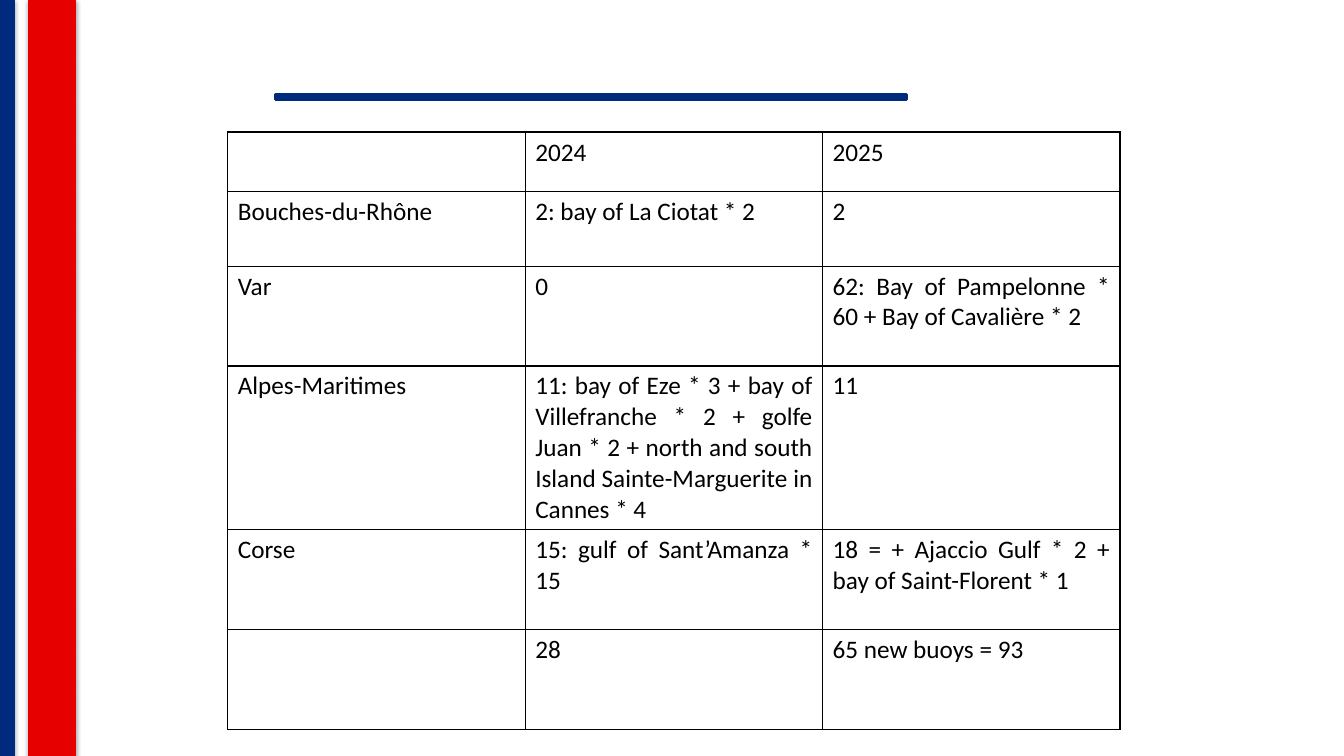
"""Build the slide with the table of mooring buoys per department."""
from lxml.etree import SubElement
from pptx import Presentation
from pptx.dml.color import RGBColor
from pptx.enum.shapes import MSO_SHAPE
from pptx.enum.text import PP_ALIGN
from pptx.oxml import parse_xml
from pptx.oxml.ns import nsdecls, qn
from pptx.util import Inches, Pt

COLORS = {"blue": "002A7E", "red": "E60000", "black": "000000", "white": "FFFFFF"}

deck = Presentation()
deck.slide_width, deck.slide_height = Inches(13.33), Inches(7.5)
page = deck.slides.add_slide(deck.slide_layouts[6])


def across(percent):
    return int(deck.slide_width * percent / 100)


def down(percent):
    return int(deck.slide_height * percent / 100)


bars = [
    (0, 0, 0.98, 100, "blue", True),
    (2.18, 0, 3.38, 100, "red", True),
    (20.48, 12.53, 46.96, 0.67, "blue", False),
]
for left, top, width, height, color, shaded in bars:
    bar = page.shapes.add_shape(
        MSO_SHAPE.RECTANGLE, across(left), down(top), across(width), down(height)
    )
    bar.shadow.inherit = False
    bar.fill.solid()
    bar.fill.fore_color.rgb = RGBColor.from_string(COLORS[color])
    bar.line.color.rgb = RGBColor.from_string(COLORS[color])
    bar.line.width = Pt(2)
    if shaded:
        effects = bar._element.spPr.find(qn("a:effectLst"))
        shadow = SubElement(effects, qn("a:outerShdw"), blurRad=str(Pt(3)),
                            dist=str(Pt(1.8)), dir="5400000", rotWithShape="0")
        tint = SubElement(shadow, qn("a:srgbClr"), val=COLORS["black"])
        SubElement(tint, qn("a:alpha"), val="35000")

buoys = [
    (7.87, "", "2024", "2025"),
    (9.87, "Bouches-du-Rhône", "2: bay of La Ciotat * 2", "2"),
    (13.2, "Var", "0", "62: Bay of Pampelonne * 60 + Bay of Cavalière * 2"),
    (20.13, "Alpes-Maritimes",
     "11: bay of Eze * 3 + bay of Villefranche * 2 + golfe Juan * 2 + "
     "north and south Island Sainte-Marguerite in Cannes * 4", "11"),
    (13.2, "Corse", "15: gulf of Sant’Amanza * 15",
     "18 = + Ajaccio Gulf * 2 + bay of Saint-Florent * 1"),
    (13.2, "", "28", "65 new buoys = 93"),
]
column_share = 22.13
table = page.shapes.add_table(
    len(buoys), 3, across(16.95), down(17.47),
    across(3 * column_share), down(sum(entry[0] for entry in buoys)),
).table
table.first_row = False
table.horz_banding = False
for column in table.columns:
    column.width = across(column_share)

for row, (share, *texts) in zip(table.rows, buoys):
    row.height = down(share)
    for cell, text in zip(row.cells, texts):
        cell.fill.solid()
        cell.fill.fore_color.rgb = RGBColor.from_string(COLORS["white"])
        properties = cell._tc.get_or_add_tcPr()
        for position, side in enumerate(("lnL", "lnR", "lnT", "lnB")):
            properties.insert(position, parse_xml(
                f'<a:{side} {nsdecls("a")} w="{Pt(1)}"><a:solidFill>'
                f'<a:srgbClr val="{COLORS["black"]}"/></a:solidFill></a:{side}>'
            ))
        para = cell.text_frame.paragraphs[0]
        para.text = text
        para.alignment = PP_ALIGN.JUSTIFY
        for span in para.runs:
            span.font.name = "Calibri"
            span.font.size = Pt(18)
            span.font.color.rgb = RGBColor.from_string(COLORS["black"])

deck.save("out.pptx")
